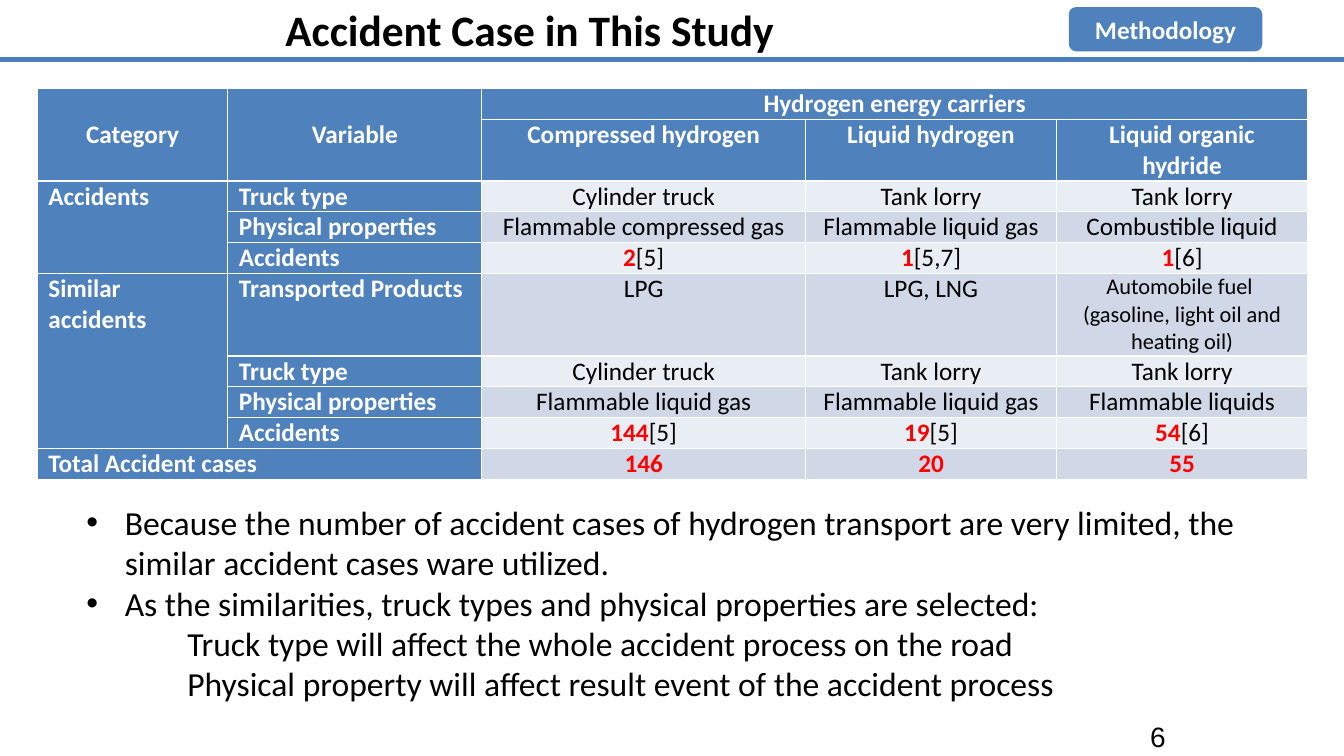
from lxml import etree
from pptx import Presentation
from pptx.dml.color import RGBColor
from pptx.enum.shapes import MSO_CONNECTOR, MSO_SHAPE
from pptx.enum.text import MSO_ANCHOR, MSO_AUTO_SIZE, PP_ALIGN
from pptx.oxml.ns import qn
from pptx.util import Inches, Pt

LEFT, CENTER, RIGHT = PP_ALIGN.LEFT, PP_ALIGN.CENTER, PP_ALIGN.RIGHT
TOP, MIDDLE = MSO_ANCHOR.TOP, MSO_ANCHOR.MIDDLE
NO_AUTOFIT = MSO_AUTO_SIZE.NONE
ROUNDED = MSO_SHAPE.ROUNDED_RECTANGLE
STRAIGHT = MSO_CONNECTOR.STRAIGHT

BLUE, RULE_BLUE = "4F81BD", "4B7EBC"
BANDS = ("E9EDF4", "D0D8E8")
WHITE, BLACK, RED = "FFFFFF", "000000", "FF0000"
TITLE_ONLY = 5

COLUMN_WIDTHS = (1.89, 2.52, 3.21, 2.49, 2.49)
ROW_HEIGHT, SPECIAL_HEIGHTS = 0.3, {0: 0.17, 1: 0.17, 3: 0.61, 7: 0.82}
SPACER_ROWS, HEADER_END, LABEL_COLUMNS = 2, 4, 2
HEADER_MERGES = (((0, 0), (1, 0)), ((0, 1), (1, 1)), ((0, 2), (0, 4)))
BODY_MERGES = (((4, 0), (6, 0)), ((7, 0), (10, 0)), ((11, 0), (11, 1)))
FUEL = "Automobile fuel \n(gasoline, light oil and heating oil)"
ROWS = (
    ("",) * 5,
    ("",) * 5,
    ("Category", "Variable", "Hydrogen energy carriers", "", ""),
    ("", "", "Compressed hydrogen", "Liquid hydrogen", "Liquid organic hydride"),
    ("Accidents", "Truck type", "Cylinder truck", "Tank lorry", "Tank lorry"),
    ("", "Physical properties", "Flammable compressed gas", "Flammable liquid gas",
     "Combustible liquid"),
    ("", "Accidents", "2[5]", "1[5,7]", "1[6]"),
    ("Similar accidents", "Transported Products", "LPG", "LPG, LNG", FUEL),
    ("", "Truck type", "Cylinder truck", "Tank lorry", "Tank lorry"),
    ("", "Physical properties", "Flammable liquid gas", "Flammable liquid gas",
     "Flammable liquids"),
    ("", "Accidents", "144[5]", "19[5]", "54[6]"),
    ("Total Accident cases", "", "146", "20", "55"),
)
BULLETS = (
    "Because the number of accident cases of hydrogen transport are very limited, "
    "the similar accident cases ware utilized.",
    "As the similarities, truck types and physical properties are selected:",
)
DETAILS = (
    "Truck type will affect the whole accident process on the road",
    "Physical property will affect result event of the accident process",
)


def color(value):
    return RGBColor.from_string(value)


def add_run(paragraph, text, size=18, fill=BLACK, bold=False, name="Calibri"):
    run = paragraph.add_run()
    run.text = text
    run.font.size, run.font.bold, run.font.name = Pt(size), bold, name
    run.font.color.rgb = color(fill)


def write_text(frame, text, align=LEFT, anchor=TOP, **font_format):
    """Write each line of text as a paragraph and return the paragraphs."""
    frame.word_wrap = True
    frame.vertical_anchor = anchor
    for index, line in enumerate(text.split("\n")):
        paragraph = frame.add_paragraph() if index else frame.paragraphs[0]
        paragraph.alignment = align
        add_run(paragraph, line, **font_format)
    return frame.paragraphs


def indent(paragraph, left, first=0, right=0, bullet=None):
    properties = paragraph._p.get_or_add_pPr()
    for name, value in (("marL", left), ("marR", right), ("indent", first)):
        properties.set(name, str(Inches(value)))
    if bullet:
        etree.SubElement(properties, qn("a:buFont")).set("typeface", "Arial")
        etree.SubElement(properties, qn("a:buChar")).set("char", bullet)


def add_text_box(slide, left, top, width, height):
    box = slide.shapes.add_textbox(Inches(left), Inches(top), Inches(width), Inches(height))
    return box.text_frame


def add_title(slide, text):
    title = slide.shapes.title
    title.left, title.top = Inches(0), Inches(-0.02)
    title.width, title.height = Inches(10.6), Inches(0.62)
    write_text(title.text_frame, text, align=CENTER, size=31, bold=True)
    title.text_frame.auto_size = NO_AUTOFIT


def add_rule(slide, top, width):
    rule = slide.shapes.add_connector(STRAIGHT, 0, Inches(top), width, Inches(top))
    rule.line.color.rgb = color(RULE_BLUE)
    rule.line.width = Pt(3.5)
    etree.SubElement(rule._element.spPr, qn("a:effectLst"))


def add_section_tag(slide, text):
    tag = slide.shapes.add_shape(ROUNDED, Inches(10.6), Inches(0.07), Inches(1.92), Inches(0.44))
    tag.shadow.inherit = False
    tag.fill.solid()
    tag.fill.fore_color.rgb = color(BLUE)
    tag.line.fill.background()
    write_text(tag.text_frame, text, align=CENTER, anchor=MIDDLE, fill=WHITE, bold=True)


def style_cell(cell, fill):
    cell.margin_left = cell.margin_right = Inches(0.07)
    cell.margin_top = cell.margin_bottom = 0
    properties = cell._tc.get_or_add_tcPr()
    for side in ("lnL", "lnR", "lnT", "lnB"):
        border = etree.SubElement(properties, qn(f"a:{side}"), w=str(Pt(1)))
        solid = etree.SubElement(border, qn("a:solidFill"))
        etree.SubElement(solid, qn("a:srgbClr"), val=WHITE)
    cell.fill.solid()
    cell.fill.fore_color.rgb = color(fill)


def write_cell(cell, text, is_header, is_label):
    anchor = MIDDLE if is_header and is_label else TOP
    cell.vertical_anchor = anchor
    align = LEFT if is_label and not is_header else CENTER
    if is_header or is_label:
        write_text(cell.text_frame, text, align, anchor, fill=WHITE, bold=True)
    elif text[0].isdigit():
        # Case counts are red, their references plain
        count, bracket, reference = text.partition("[")
        paragraph = write_text(cell.text_frame, count, align, anchor, fill=RED, bold=True)[0]
        if bracket:
            add_run(paragraph, bracket + reference)
    else:
        write_text(cell.text_frame, text, align, anchor, size=16 if text == FUEL else 18)
    for paragraph in cell.text_frame.paragraphs:
        indent(paragraph, 0.04, right=0.04)


def cell_fill(row, is_label):
    if row < SPACER_ROWS:
        return WHITE
    return BLUE if row < HEADER_END or is_label else BANDS[row % 2]


def add_accident_table(slide):
    heights = [SPECIAL_HEIGHTS.get(row, ROW_HEIGHT) for row in range(len(ROWS))]
    table = slide.shapes.add_table(
        len(ROWS), len(COLUMN_WIDTHS), Inches(0.37), Inches(0.54),
        Inches(sum(COLUMN_WIDTHS)), Inches(sum(heights))).table
    for column, width in zip(table.columns, COLUMN_WIDTHS):
        column.width = Inches(width)
    for row, height in zip(table.rows, heights):
        row.height = Inches(height)
    for row, texts in enumerate(ROWS):
        for column, text in enumerate(texts):
            is_label = column < LABEL_COLUMNS
            cell = table.cell(row, column)
            style_cell(cell, cell_fill(row, is_label))
            if text:
                write_cell(cell, text, row < HEADER_END, is_label)
            else:
                # Small type keeps empty cells from stretching their row
                paragraph = cell.text_frame.paragraphs[0]._p
                etree.SubElement(paragraph, qn("a:endParaRPr"), sz="800")
    for first, last in HEADER_MERGES + BODY_MERGES:
        table.cell(*first).merge(table.cell(*last))
    for (top, left), (bottom, right) in HEADER_MERGES:
        table.cell(top + SPACER_ROWS, left).merge(table.cell(bottom + SPACER_ROWS, right))


def add_remarks(slide):
    frame = add_text_box(slide, 0.76, 4.93, 12.13, 2.12)
    paragraphs = write_text(frame, "\n".join(BULLETS + DETAILS), size=24)
    for index, paragraph in enumerate(paragraphs):
        if index < len(BULLETS):
            indent(paragraph, 0.38, -0.38, bullet="•")
        else:
            paragraph.level = 1
            indent(paragraph, 1)


def add_slide_number(slide, number):
    frame = add_text_box(slide, 9.33, 7.1, 2.33, 0.4)
    write_text(frame, number, align=RIGHT, anchor=MIDDLE, size=20, name="Arial")


def main():
    presentation = Presentation()
    presentation.slide_width, presentation.slide_height = Inches(13.33), Inches(7.5)
    slide = presentation.slides.add_slide(presentation.slide_layouts[TITLE_ONLY])
    # Content
    add_accident_table(slide)
    add_remarks(slide)
    add_slide_number(slide, "6")
    # Heading
    add_title(slide, "Accident Case in This Study ")
    add_rule(slide, 0.59, presentation.slide_width)
    add_section_tag(slide, "Methodology")
    presentation.save("out.pptx")


if __name__ == "__main__":
    main()
